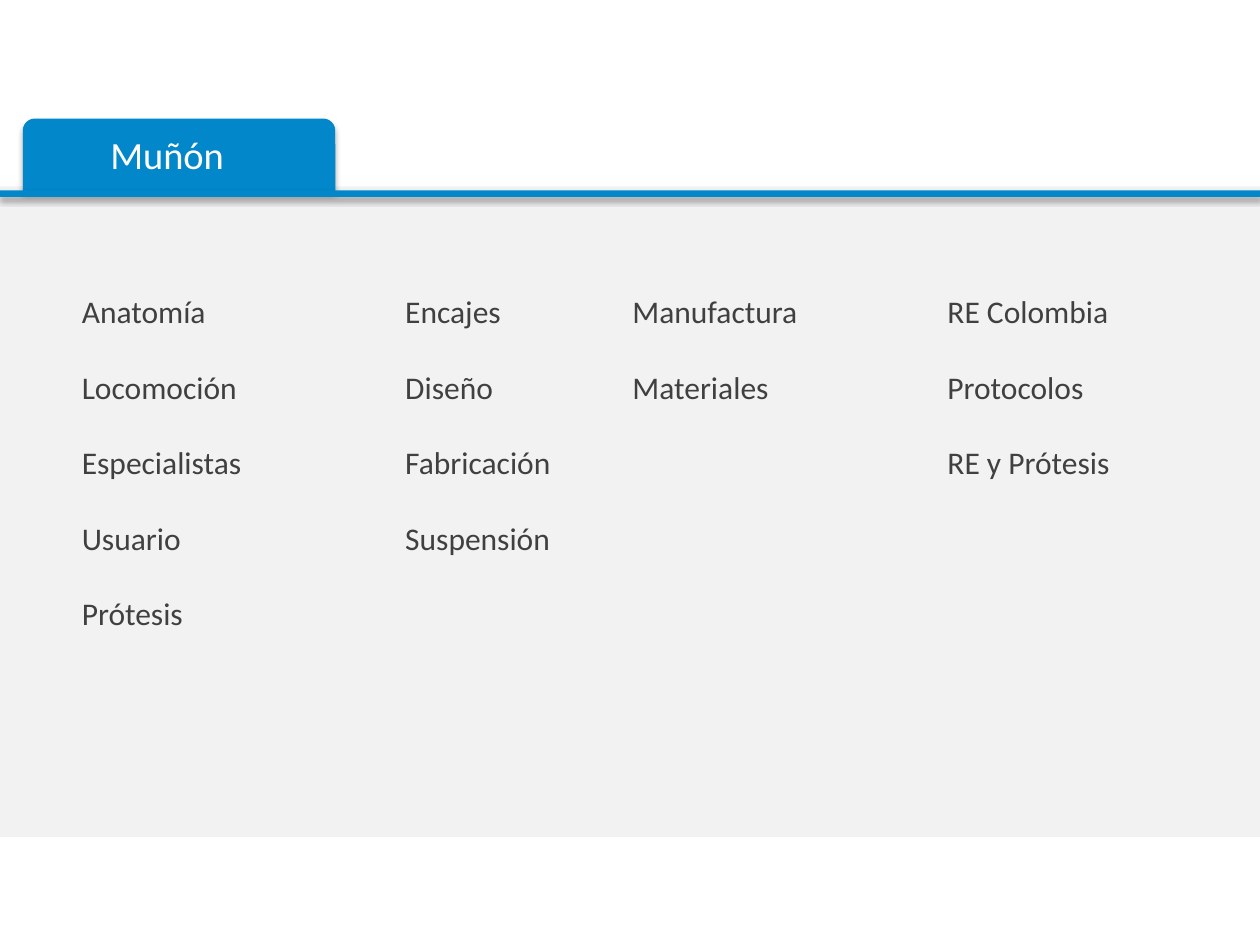
from lxml.etree import SubElement
from pptx import Presentation
from pptx.dml.color import RGBColor
from pptx.enum.shapes import MSO_SHAPE as Kind
from pptx.enum.text import PP_ALIGN as Align
from pptx.oxml.ns import qn
from pptx.util import Cm, Pt

WHITE, BLUE, PALE, DARK = "FFFFFF", "0287CA", "F2F2F2", "404040"


def paint(color, tone):
    color.rgb = RGBColor.from_string(tone)


class Deck:
    font = "Calibri"
    shade = {"blurRad": Pt(3.5), "dist": Pt(2.2), "dir": 90 * 60000,
             "algn": "t", "rotWithShape": 0}

    def __init__(self, wide, high):
        self.file = Presentation()
        self.file.slide_width, self.file.slide_height = Cm(wide), Cm(high)
        self.slide = self.file.slides.add_slide(self.file.slide_layouts[6])

    def block(self, box, tone, kind=Kind.RECTANGLE, shadow=False):
        shape = self.slide.shapes.add_shape(kind, *map(Cm, box))
        shape.fill.solid()
        paint(shape.fill.fore_color, tone)
        shape.line.fill.background()
        shape.shadow.inherit = False
        if shadow:
            self.cast(shape)
        return shape

    def cast(self, shape):
        effects = shape._element.spPr.find(qn("a:effectLst"))
        outer = SubElement(effects, qn("a:outerShdw"))
        for key, value in self.shade.items():
            outer.set(key, str(value))
        color = SubElement(outer, qn("a:srgbClr"), val="000000")
        SubElement(color, qn("a:alpha"), val="32000")

    def text(self, box, lines, size, tone, wrap=True, **form):
        frame = self.slide.shapes.add_textbox(*map(Cm, box)).text_frame
        frame.word_wrap = wrap
        frame.text = "\n".join(lines)
        for para in frame.paragraphs:
            for key, value in form.items():
                setattr(para, key, value)
            for run in para.runs:
                for key, value in {"name": self.font, "size": Pt(size)}.items():
                    setattr(run.font, key, value)
                paint(run.font.color, tone)


def main():
    deck = Deck(25.4, 19.05)

    # Panel
    deck.block((0, 3.76, 25.4, 13.11), PALE)

    # Tab with its title, and the bar below
    deck.block((0.46, 2.39, 6.3, 1.47), BLUE, Kind.ROUND_2_SAME_RECTANGLE, True)
    deck.text((1.96, 2.51, 2.82, 1.19), ["Muñón"], 22, WHITE, wrap=False,
              alignment=Align.CENTER)
    deck.block((0, 3.84, 25.4, 0.13), BLUE, shadow=True)

    # Menu columns: left, width, height, entries
    menu = [
        (1.4, 5.77, 8.71, ["Anatomía", "Locomoción", "Especialistas",
                           "Usuario", "Prótesis"]),
        (7.92, 4.95, 7.95, ["Encajes", "Diseño", "Fabricación", "Suspensión"]),
        (12.5, 4.95, 4.88, ["Manufactura", "Materiales"]),
        (18.85, 4.95, 7.19, ["RE Colombia", "Protocolos", "RE y Prótesis"]),
    ]
    for left, wide, high, names in menu:
        deck.text((left, 5.77, wide, high), names, 18, DARK,
                  space_after=Pt(21.5))

    deck.file.save("out.pptx")


if __name__ == "__main__":
    main()
